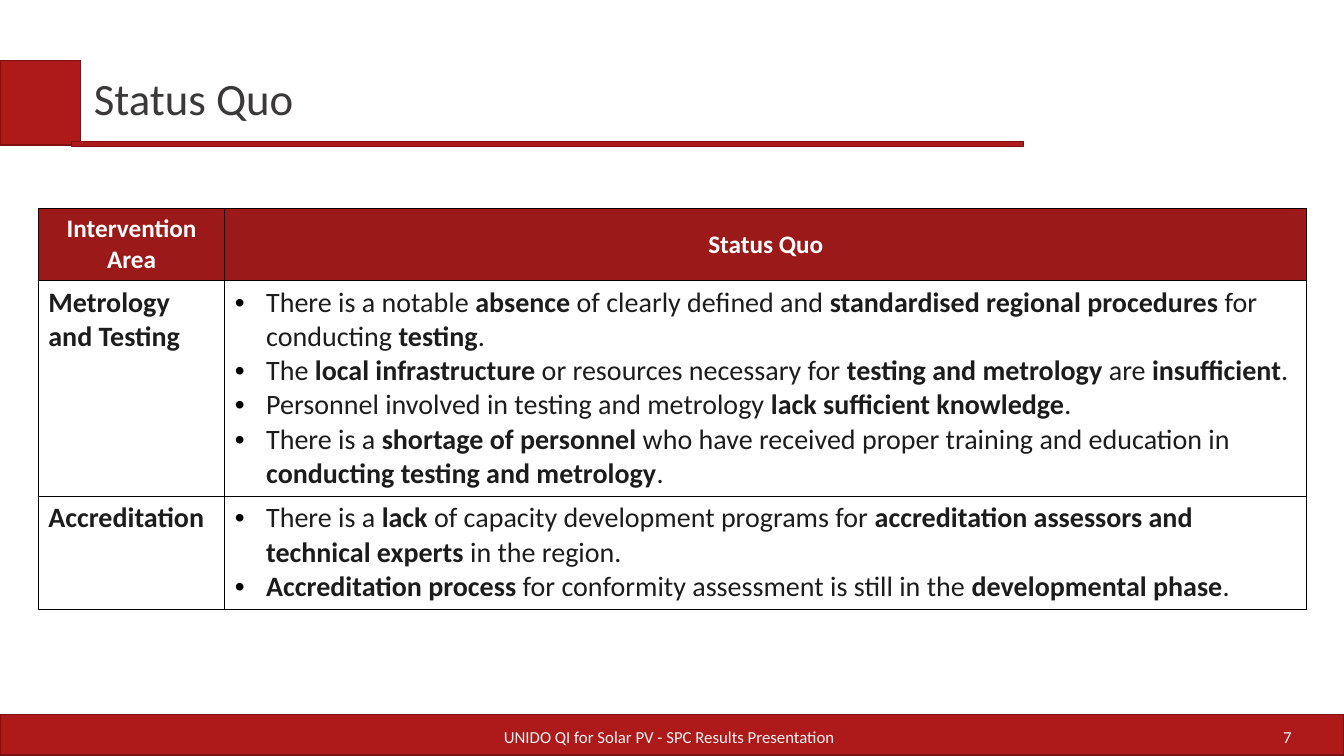
import dataclasses
import typing

import lxml.etree
import pptx
import pptx.dml.color
import pptx.enum.shapes
import pptx.enum.text
import pptx.oxml.ns
import pptx.util

PX = 9144
FONT = "Calibri"
RED, DARK_RED, HEADER_RED = "AE1919", "7E1212", "9B1919"
WHITE, PALE, INK, TITLE_INK, BLACK = "FFFFFF", "F2F2F2", "1D1C1C", "3A3838", "000000"
ALIGN = pptx.enum.text.PP_ALIGN
ANCHOR = pptx.enum.text.MSO_ANCHOR


@dataclasses.dataclass
class Box:
    left: int
    top: int
    width: int
    height: int

    def emu(self) -> tuple[int, int, int, int]:
        return self.left * PX, self.top * PX, self.width * PX, self.height * PX


@dataclasses.dataclass
class Footer:
    box: Box
    text: str
    align: typing.Any


@dataclasses.dataclass
class Area:
    name: str
    height: int
    points: list[str]


BARS = [Box(0, 709, 1333, 40), Box(0, 60, 80, 84), Box(71, 140, 944, 5)]
FOOTERS = [
    Footer(Box(361, 711, 606, 40), "UNIDO QI for Solar PV - SPC Results Presentation", ALIGN.CENTER),
    Footer(Box(977, 711, 314, 40), "7", ALIGN.RIGHT),
]
TABLE_BOX = Box(38, 207, 1258, 395)
COLUMNS = [185, 1073]
HEADER_HEIGHT = 71
HEADERS = ["Intervention Area", "Status Quo"]
AREAS = [
    Area("Metrology and Testing", 213, [
        "There is a notable **absence** of clearly defined and "
        "**standardised regional procedures** for conducting **testing**.",
        "The **local infrastructure** or resources necessary for "
        "**testing and metrology** are **insufficient**.",
        "Personnel involved in testing and metrology **lack sufficient knowledge**.",
        "There is a **shortage of personnel** who have received proper training "
        "and education in **conducting testing and metrology**.",
    ]),
    Area("Accreditation", 111, [
        "There is a **lack** of capacity development programs for "
        "**accreditation assessors and technical experts** in the region.",
        "**Accreditation process** for conformity assessment is still in the "
        "**developmental phase**.",
    ]),
]


def rgb(value: str) -> pptx.dml.color.RGBColor:
    return pptx.dml.color.RGBColor.from_string(value)


def add_element(parent, tag: str, **attributes: str):
    return lxml.etree.SubElement(parent, pptx.oxml.ns.qn(tag), **attributes)


def style_font(font, size: int, color: str, bold: bool = False) -> None:
    font.name = FONT
    font.size = pptx.util.Pt(size)
    font.bold = bold
    font.color.rgb = rgb(color)


def write_paragraph(p, text: str, size: int, color: str, align=ALIGN.LEFT) -> None:
    p.alignment = align
    for i, part in enumerate(text.split("**")):
        if part:
            r = p.add_run()
            r.text = part
            style_font(r.font, size, color, i % 2 == 1)


def add_bullet(p) -> None:
    pPr = p._p.get_or_add_pPr()
    pPr.set("marL", str(31 * PX))
    pPr.set("indent", str(-31 * PX))
    add_element(add_element(pPr, "a:buClr"), "a:srgbClr", val=BLACK)
    add_element(pPr, "a:buFont", typeface="Arial")
    add_element(pPr, "a:buChar", char="•")


def format_frame(tf, vertical_inset: int) -> None:
    tf.word_wrap = True
    tf.auto_size = pptx.enum.text.MSO_AUTO_SIZE.NONE
    tf.vertical_anchor = ANCHOR.MIDDLE
    tf.margin_left = tf.margin_right = 10 * PX
    tf.margin_top = tf.margin_bottom = vertical_inset * PX


def add_bar(s, box: Box) -> None:
    sp = s.shapes.add_shape(pptx.enum.shapes.MSO_SHAPE.RECTANGLE, *box.emu())
    sp.shadow.inherit = False
    sp.fill.solid()
    sp.fill.fore_color.rgb = rgb(RED)
    sp.line.color.rgb = rgb(DARK_RED)
    sp.line.width = pptx.util.Pt(0.85)


def add_footer(s, footer: Footer) -> None:
    tf = s.shapes.add_textbox(*footer.box.emu()).text_frame
    format_frame(tf, 5)
    write_paragraph(tf.paragraphs[0], footer.text, 12, PALE, footer.align)


def set_title(s, text: str) -> None:
    sp = s.shapes.title
    sp.left, sp.top, sp.width, sp.height = Box(83, 64, 838, 72).emu()
    tf = sp.text_frame
    format_frame(tf, 10)
    p = tf.paragraphs[0]
    write_paragraph(p, text, 32, TITLE_INK)
    p.line_spacing = 0.9


def format_cell(cell, fill: str | None) -> None:
    tcPr = cell._tc.get_or_add_tcPr()
    for side in ("a:lnL", "a:lnR", "a:lnT", "a:lnB"):
        ln = add_element(tcPr, side, w=str(pptx.util.Pt(1)))
        add_element(add_element(ln, "a:solidFill"), "a:srgbClr", val=BLACK)
    if fill:
        cell.fill.solid()
        cell.fill.fore_color.rgb = rgb(fill)
    else:
        cell.fill.background()
    cell.vertical_anchor = ANCHOR.MIDDLE if fill else ANCHOR.TOP
    cell.margin_left = cell.margin_right = 10 * PX
    cell.margin_top = cell.margin_bottom = 5 * PX


def add_status_table(s) -> None:
    table = s.shapes.add_table(len(AREAS) + 1, len(COLUMNS), *TABLE_BOX.emu()).table
    table.first_row = table.horz_banding = False
    for column, width in zip(table.columns, COLUMNS):
        column.width = width * PX
    for row, height in zip(table.rows, [HEADER_HEIGHT] + [a.height for a in AREAS]):
        row.height = height * PX
    for i, header in enumerate(HEADERS):
        cell = table.cell(0, i)
        format_cell(cell, HEADER_RED)
        write_paragraph(cell.text_frame.paragraphs[0], f"**{header}**", 18, WHITE, ALIGN.CENTER)
    for i, area in enumerate(AREAS, 1):
        name, points = table.cell(i, 0), table.cell(i, 1)
        format_cell(name, None)
        format_cell(points, None)
        write_paragraph(name.text_frame.paragraphs[0], f"**{area.name}**", 20, INK)
        tf = points.text_frame
        for j, point in enumerate(area.points):
            p = tf.add_paragraph() if j else tf.paragraphs[0]
            add_bullet(p)
            write_paragraph(p, point, 20, INK)


def main() -> None:
    prs = pptx.Presentation()
    prs.slide_width, prs.slide_height = 1333 * PX, 750 * PX
    s = prs.slides.add_slide(prs.slide_layouts[5])
    for bar in BARS:
        add_bar(s, bar)
    set_title(s, "Status Quo")
    add_status_table(s)
    for footer in FOOTERS:
        add_footer(s, footer)
    prs.save("out.pptx")


if __name__ == "__main__":
    main()
